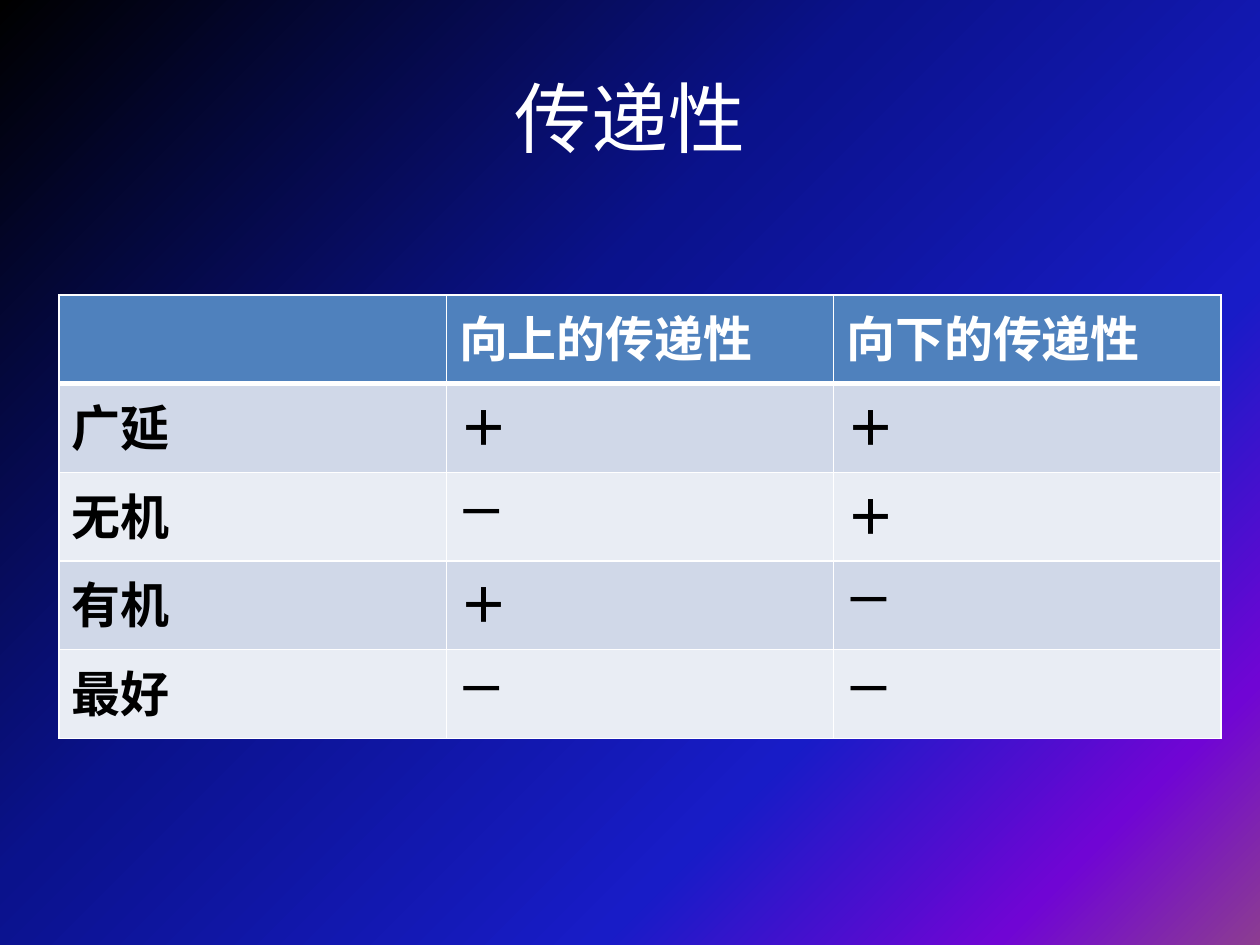
from lxml.etree import SubElement
from pptx import Presentation
from pptx.dml.color import RGBColor
from pptx.enum.text import MSO_ANCHOR as Anchor, PP_ALIGN as Align
from pptx.oxml.ns import qn
from pptx.util import Inches, Pt

WHITE = RGBColor(0xFF, 0xFF, 0xFF)
BLACK = RGBColor(0x00, 0x00, 0x00)
HEADER_BLUE = RGBColor(0x4F, 0x81, 0xBD)
BAND_DARK = RGBColor(0xD0, 0xD8, 0xE8)
BAND_LIGHT = RGBColor(0xE9, 0xED, 0xF4)
NAVY = RGBColor(0x0A, 0x12, 0x8C)
ROYAL_BLUE = RGBColor(0x18, 0x1C, 0xC7)
VIOLET = RGBColor(0x70, 0x05, 0xD4)
MAUVE = RGBColor(0x8C, 0x3D, 0x91)

BACKGROUND_STOPS = [(0, BLACK), (40, NAVY), (70, ROYAL_BLUE), (88, VIOLET), (100, MAUVE)]
TRANSITIVITY_ROWS = [
    ("", "向上的传递性", "向下的传递性"),
    ("广延", "＋", "＋"),
    ("无机", "—", "＋"),
    ("有机", "＋", "—"),
    ("最好", "—", "—"),
]


class SlideBuilder:
    font_name = "Calibri"
    title_size = Pt(44)
    cell_size = Pt(28)

    def __init__(self, slide):
        self.slide = slide

    def background(self, stops, angle):
        fill = self.slide.background.fill
        fill.gradient()
        fill.gradient_angle = 360 - angle
        stop_list = self.slide.element.xpath(".//a:gsLst")[0]
        for stop in list(stop_list):
            stop_list.remove(stop)
        for percent, color in stops:
            stop = SubElement(stop_list, qn("a:gs"), pos=str(percent * 1000))
            SubElement(stop, qn("a:srgbClr"), val=str(color))

    def run(self, paragraph, text, size, color, bold=False):
        run = paragraph.add_run()
        run.text = text
        run.font.name = self.font_name
        run.font.size = size
        run.font.bold = bold
        run.font.color.rgb = color

    def title(self, text, left, top, width, height):
        shape = self.slide.shapes.add_textbox(
            Inches(left), Inches(top), Inches(width), Inches(height))
        frame = shape.text_frame
        frame.word_wrap = True
        frame.vertical_anchor = Anchor.MIDDLE
        paragraph = frame.paragraphs[0]
        paragraph.alignment = Align.CENTER
        self.run(paragraph, text, self.title_size, WHITE)

    def borders(self, cell, widths):
        properties = cell._tc.get_or_add_tcPr()
        for side, width in widths.items():
            line = SubElement(properties, qn(f"a:ln{side}"), w=str(Pt(width)))
            SubElement(SubElement(line, qn("a:solidFill")), qn("a:srgbClr"), val=str(WHITE))

    def table(self, rows, left, top, width, height):
        table = self.slide.shapes.add_table(
            len(rows), len(rows[0]), Inches(left), Inches(top),
            Inches(width), Inches(height)).table
        for row_index, texts in enumerate(rows):
            is_header = row_index == 0
            band = BAND_DARK if row_index % 2 else BAND_LIGHT
            widths = {"L": 1, "R": 1, "T": 3 if row_index == 1 else 1,
                      "B": 3 if is_header else 1}
            for column_index, text in enumerate(texts):
                cell = table.cell(row_index, column_index)
                self.borders(cell, widths)
                cell.fill.solid()
                cell.fill.fore_color.rgb = HEADER_BLUE if is_header else band
                if text:
                    self.run(cell.text_frame.paragraphs[0], text, self.cell_size,
                             WHITE if is_header else BLACK, bold=True)


def main():
    presentation = Presentation()
    presentation.slide_width = Inches(10)
    presentation.slide_height = Inches(7.5)
    builder = SlideBuilder(presentation.slides.add_slide(presentation.slide_layouts[6]))
    builder.background(BACKGROUND_STOPS, 45)
    builder.title("传递性", 0.5, 0.3, 9, 1.25)
    builder.table(TRANSITIVITY_ROWS, 0.47, 2.34, 9.22, 3.52)
    presentation.save("out.pptx")


if __name__ == "__main__":
    main()
